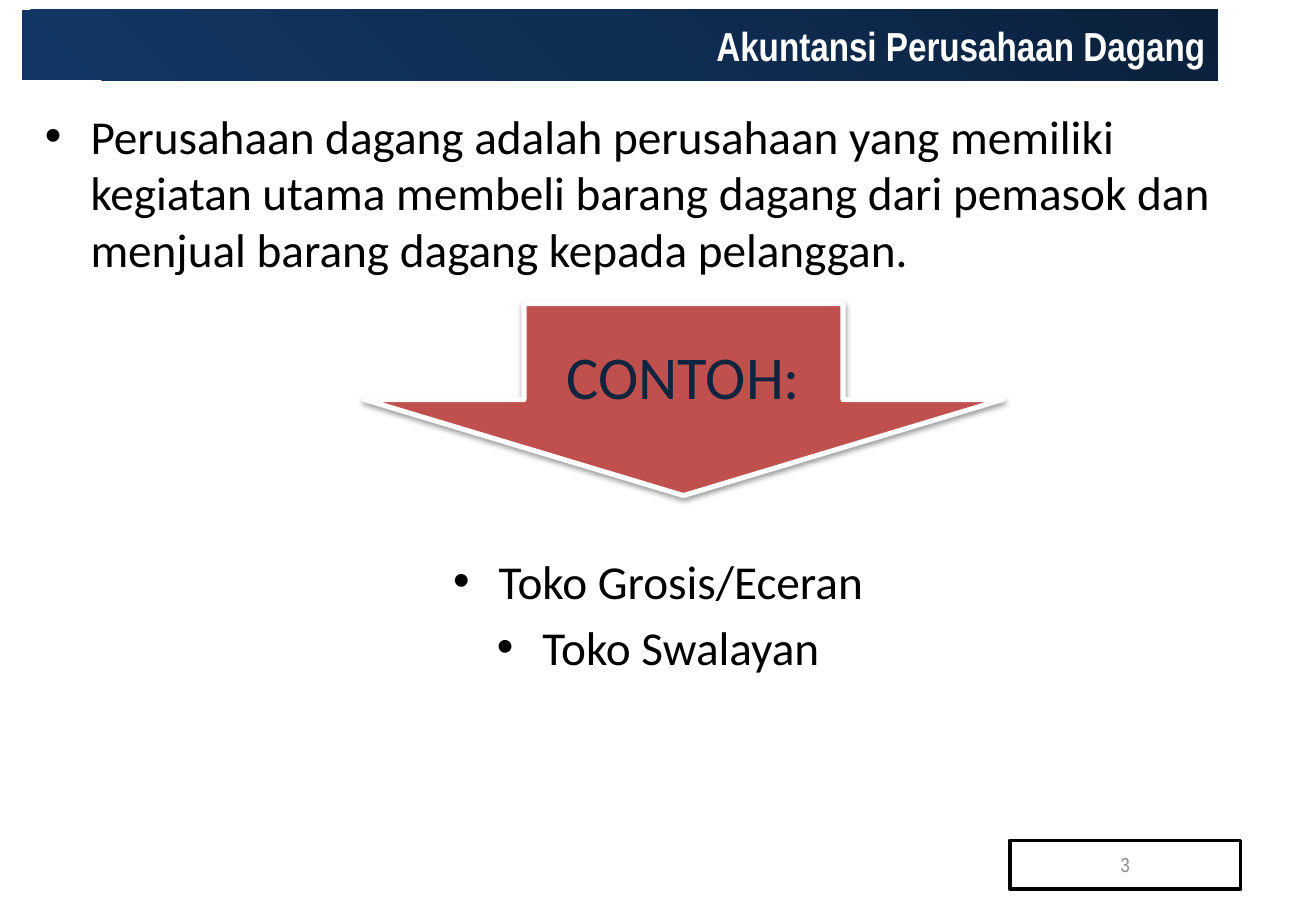
from lxml import etree
from pptx import Presentation
from pptx.dml.color import RGBColor
from pptx.enum.shapes import MSO_SHAPE
from pptx.enum.text import MSO_ANCHOR, MSO_AUTO_SIZE, PP_ALIGN
from pptx.oxml import parse_xml
from pptx.oxml.ns import nsdecls, qn
from pptx.util import Inches, Pt

BLACK = RGBColor(0x00, 0x00, 0x00)
WHITE = RGBColor(0xFF, 0xFF, 0xFF)
GREY = RGBColor(0x8C, 0x8C, 0x8C)
RED = RGBColor(0xC0, 0x50, 0x4D)
NAVY = RGBColor(0x0F, 0x24, 0x3E)
BANNER_STOPS = [(0, RGBColor(0x0B, 0x20, 0x3B)),
                (50, RGBColor(0x0F, 0x2E, 0x53)),
                (100, RGBColor(0x12, 0x36, 0x63))]


def place(sp, left, top, width, height):
    sp.left, sp.top = Inches(left), Inches(top)
    sp.width, sp.height = Inches(width), Inches(height)


def write(p, text, font, size, color, align):
    p.text = text
    p.alignment = align
    p.font.name, p.font.size = font, Pt(size)
    p.font.color.rgb = color


prs = Presentation()
prs.slide_width, prs.slide_height = Inches(10.83), Inches(7.5)
slide = prs.slides.add_slide(prs.slide_layouts[1])

# Title banner with a radial gradient centred on the top right corner
title = slide.shapes.title
place(title, 0.18, 0.08, 9.84, 0.58)
stops = "".join(f'<a:gs pos="{pos * 1000}"><a:srgbClr val="{color}"/></a:gs>'
                for pos, color in BANNER_STOPS)
title.fill.background()
no_fill = title.element.spPr.find(qn("a:noFill"))
no_fill.getparent().replace(no_fill, parse_xml(
    f'<a:gradFill {nsdecls("a")} rotWithShape="1"><a:gsLst>{stops}</a:gsLst>'
    '<a:path path="circle"><a:fillToRect l="100000" b="100000"/></a:path></a:gradFill>'))
tf = title.text_frame
tf.auto_size = MSO_AUTO_SIZE.NONE
tf.vertical_anchor = MSO_ANCHOR.MIDDLE
write(tf.paragraphs[0], "Akuntansi Perusahaan Dagang", "Arial Narrow", 24, WHITE, PP_ALIGN.RIGHT)
tf.paragraphs[0].font.bold = True

# Definition, then the examples below the arrow
body = slide.placeholders[1]
place(body, 0.27, 0.83, 10.29, 5.92)
tf = body.text_frame
tf.auto_size = MSO_AUTO_SIZE.NONE
definition = ("Perusahaan dagang adalah perusahaan yang memiliki kegiatan utama membeli "
              "barang dagang dari pemasok dan menjual barang dagang kepada pelanggan.")
write(tf.paragraphs[0], definition, "Calibri", 28, BLACK, PP_ALIGN.LEFT)
tf.paragraphs[0].space_before = Pt(0)
for example, gap in [("Toko Grosis/Eceran", 163), ("Toko Swalayan", 5.6)]:
    p = tf.add_paragraph()
    write(p, example, "Calibri", 28, BLACK, PP_ALIGN.CENTER)
    p.space_before = Pt(gap)

# Slide number box
number = slide.shapes.add_shape(MSO_SHAPE.RECTANGLE, 0, 0, 0, 0)
place(number, 8.31, 6.92, 1.9, 0.4)
number.shadow.inherit = False
number.fill.background()
number.line.color.rgb, number.line.width = BLACK, Pt(2.25)
number.text_frame.vertical_anchor = MSO_ANCHOR.MIDDLE
write(number.text_frame.paragraphs[0], "3", "Arial Narrow", 12, GREY, PP_ALIGN.CENTER)

# Arrow leading to the examples
arrow = slide.shapes.add_shape(MSO_SHAPE.DOWN_ARROW, 0, 0, 0, 0)
place(arrow, 3, 2.5, 5.25, 1.58)
arrow.fill.solid()
arrow.fill.fore_color.rgb = RED
arrow.line.color.rgb, arrow.line.width = WHITE, Pt(3)
arrow.shadow.inherit = False
effects = arrow.element.spPr.find(qn("a:effectLst"))
shadow = etree.SubElement(effects, qn("a:outerShdw"), blurRad=str(Pt(3.1)),
                          dist=str(Pt(1.6)), dir="5400000", rotWithShape="0")
shade = etree.SubElement(shadow, qn("a:srgbClr"), val=str(BLACK))
etree.SubElement(shade, qn("a:alpha"), val="38000")
arrow.text_frame.vertical_anchor = MSO_ANCHOR.MIDDLE
write(arrow.text_frame.paragraphs[0], "CONTOH:", "Calibri", 36, NAVY, PP_ALIGN.CENTER)

prs.save("out.pptx")
